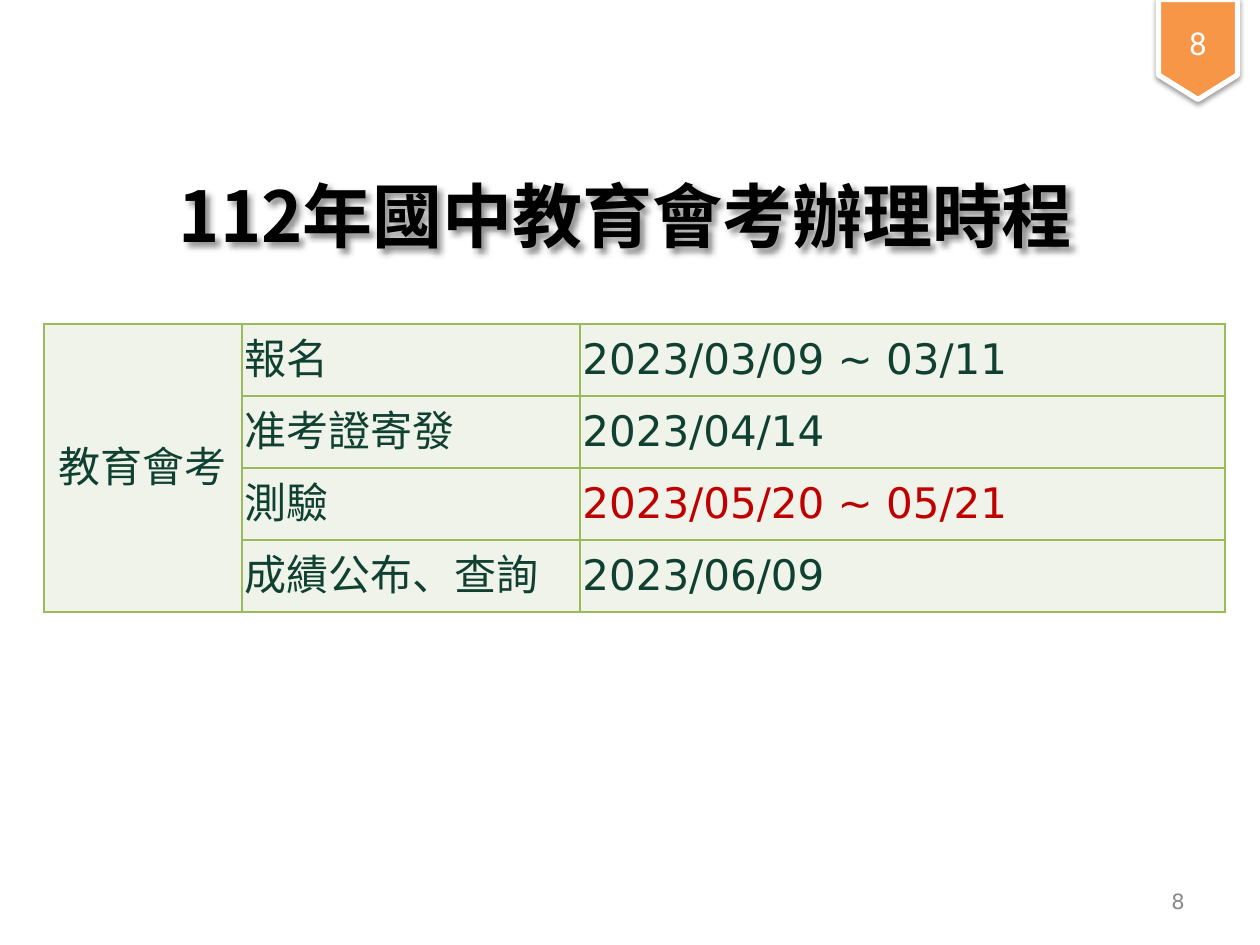
import lxml.etree
import pptx
import pptx.dml.color
import pptx.enum.shapes
import pptx.enum.text
import pptx.oxml.ns
import pptx.util

RGBColor = pptx.dml.color.RGBColor
ALIGN = pptx.enum.text.PP_ALIGN
MIDDLE = pptx.enum.text.MSO_ANCHOR.MIDDLE
WHITE = RGBColor(0xFF, 0xFF, 0xFF)
BLACK = RGBColor(0x00, 0x00, 0x00)
ORANGE = RGBColor(0xF7, 0x96, 0x46)
GREY = RGBColor(0x89, 0x89, 0x89)
DARK_GREEN = RGBColor(0x10, 0x40, 0x31)
RED = RGBColor(0xC0, 0x00, 0x00)
PALE_GREEN = RGBColor(0xEF, 0xF3, 0xEA)
BORDER_GREEN = RGBColor(0x9B, 0xBB, 0x59)


def px(n):
    """Turn pixels into EMU at 126 pixels to the inch."""
    return pptx.util.Emu(round(n * 914400 / 126))


def add_xml(parent, tag, **attrs):
    """Append a DrawingML child with the given attributes."""
    child = lxml.etree.SubElement(parent, pptx.oxml.ns.qn(tag))
    for name, value in attrs.items():
        child.set(name, str(value))
    return child


class SlideBuilder:
    """Holds the style and the current slide, and draws each kind of element."""

    font = "DejaVu Sans"

    def __init__(self, prs):
        self.slide = prs.slides.add_slide(prs.slide_layouts[6])

    def add_run(self, tf, text, size, color, align=ALIGN.LEFT, font=None, bold=False):
        """Add one run to the first paragraph of a text frame."""
        p = tf.paragraphs[0]
        p.alignment = align
        r = p.add_run()
        r.text = text
        r.font.size = pptx.util.Pt(size)
        r.font.name = font or self.font
        r.font.bold = bold
        r.font.color.rgb = color
        add_xml(r.font._element, "a:ea", typeface=font or self.font)

    def shadow(self, sp, blur, dist, angle, alpha):
        """Give a shape a soft black shadow."""
        sp.shadow.inherit = False
        effects = sp._element.spPr.find(pptx.oxml.ns.qn("a:effectLst"))
        outer = add_xml(effects, "a:outerShdw", blurRad=int(pptx.util.Pt(blur)),
                        dist=int(pptx.util.Pt(dist)), dir=angle * 60000, rotWithShape=0)
        add_xml(add_xml(outer, "a:srgbClr", val=BLACK), "a:alpha", val=alpha * 1000)

    def text(self, x, y, w, h, text, size, color, align, **style):
        """Add a vertically centred text box."""
        sp = self.slide.shapes.add_textbox(px(x), px(y), px(w), px(h))
        tf = sp.text_frame
        tf.word_wrap = True
        tf.vertical_anchor = MIDDLE
        self.add_run(tf, text, size, color, align, **style)
        return sp

    def badge(self, x, y, w, h, text):
        """Add a downward pentagon with upright text."""
        sp = self.slide.shapes.add_shape(
            pptx.enum.shapes.MSO_SHAPE.PENTAGON, px(x), px(y), px(w), px(h))
        sp.adjustments[0] = 0.31
        sp.rotation = 90
        sp.fill.solid()
        sp.fill.fore_color.rgb = ORANGE
        sp.line.color.rgb = WHITE
        sp.line.width = pptx.util.Pt(3)
        self.shadow(sp, 3.1, 1.6, 90, 38)
        tf = sp.text_frame
        tf.vertical_anchor = MIDDLE
        tf._txBody.bodyPr.set("vert", "vert270")
        self.add_run(tf, text, 18, WHITE, ALIGN.CENTER, font="Roboto")

    def style_cell(self, cell):
        """Set the margins, borders and fill of a table cell."""
        cell.margin_left = cell.margin_right = pptx.util.Inches(0.02)
        cell.margin_top = cell.margin_bottom = 0
        cell.vertical_anchor = MIDDLE
        tc_pr = cell._tc.get_or_add_tcPr()
        for side in ("a:lnL", "a:lnR", "a:lnT", "a:lnB"):
            ln = add_xml(tc_pr, side, w=int(pptx.util.Pt(1)))
            add_xml(add_xml(ln, "a:solidFill"), "a:srgbClr", val=BORDER_GREEN)
        cell.fill.solid()
        cell.fill.fore_color.rgb = PALE_GREEN

    def schedule(self, x, y, col_widths, row_height, heading, events):
        """Add a table whose first column is one merged heading."""
        n = len(events)
        table = self.slide.shapes.add_table(
            n, len(col_widths), px(x), px(y), px(sum(col_widths)), px(row_height * n)).table
        for col, width in zip(table.columns, col_widths):
            col.width = px(width)
        for row in table.rows:
            row.height = px(row_height)
        for cell in table.iter_cells():
            self.style_cell(cell)
        table.cell(0, 0).merge(table.cell(n - 1, 0))
        self.add_run(table.cell(0, 0).text_frame, heading, 24, DARK_GREEN, ALIGN.CENTER)
        for i, (event, date, color) in enumerate(events):
            self.add_run(table.cell(i, 1).text_frame, event, 24, DARK_GREEN)
            self.add_run(table.cell(i, 2).text_frame, date, 24, color)


def main():
    """Build the exam schedule slide."""
    prs = pptx.Presentation()
    prs.slide_width, prs.slide_height = px(1260), px(945)
    s = SlideBuilder(prs)
    s.badge(1148, 10, 100, 79, "8")
    s.text(903, 876, 294, 50, "8", 12, GREY, ALIGN.RIGHT)
    s.schedule(44, 324, (198, 338, 645), 72, "教育會考", (
        ("報名", "2023/03/09 ~ 03/11", DARK_GREEN),
        ("准考證寄發", "2023/04/14", DARK_GREEN),
        ("測驗", "2023/05/20 ~ 05/21", RED),
        ("成績公布、查詢", "2023/06/09", DARK_GREEN),
    ))
    title = s.text(34, 145, 1183, 140, "112年國中教育會考辦理時程", 40, BLACK,
                   ALIGN.CENTER, font="Noto Sans CJK SC", bold=True)
    s.shadow(title, 3, 3, 45, 43)
    prs.save("out.pptx")


if __name__ == "__main__":
    main()
